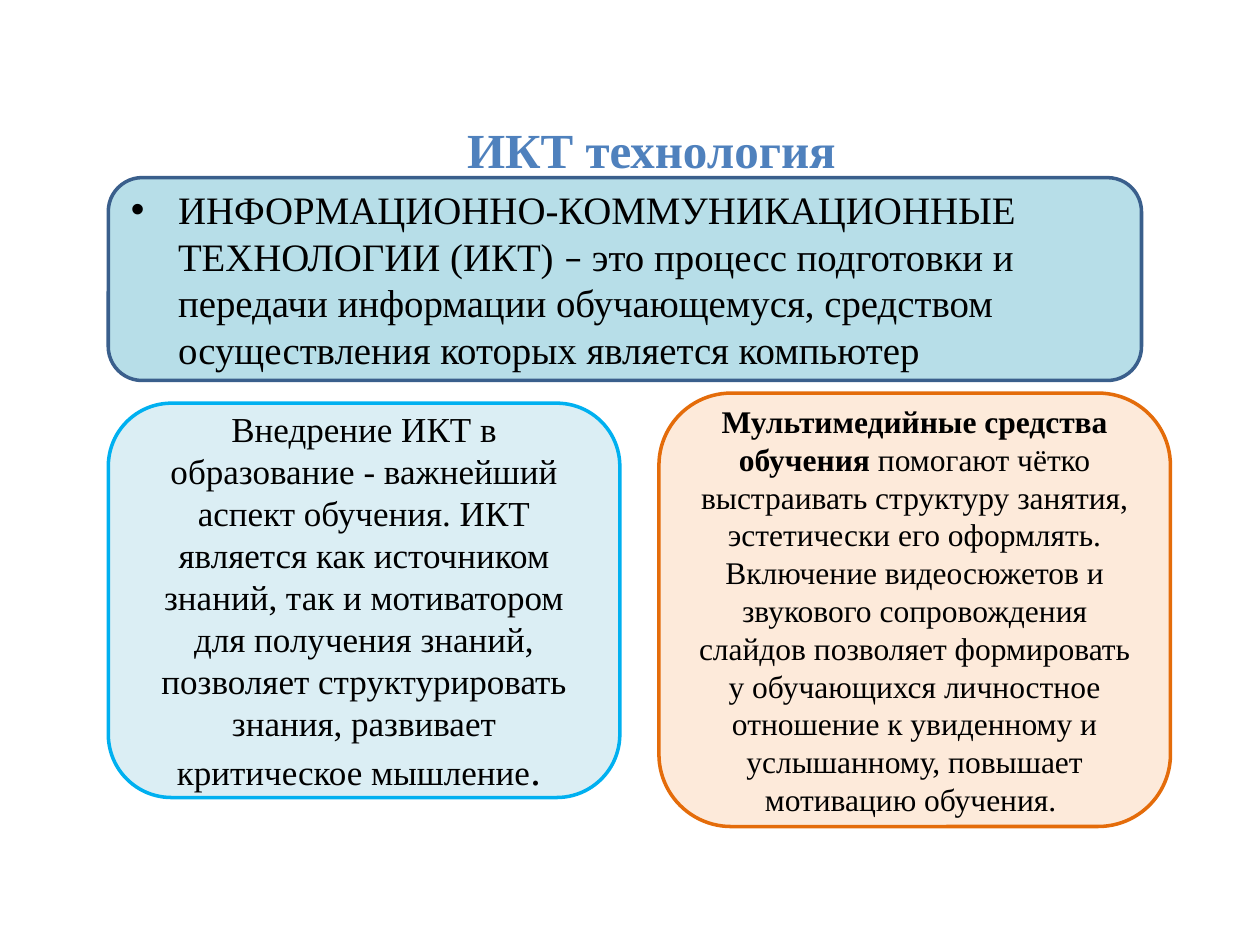
from lxml import etree
from pptx import Presentation
from pptx import util as u
from pptx.dml.color import RGBColor
from pptx.enum import shapes, text
from pptx.oxml.ns import qn

SERIF = "Times New Roman"
SANS = "Calibri"
BLACK = RGBColor(0x00, 0x00, 0x00)
TITLE_BLUE = RGBColor(0x4F, 0x81, 0xBD)
TEAL_FILL = RGBColor(0xB7, 0xDE, 0xE8)
NAVY_LINE = RGBColor(0x3A, 0x5F, 0x8C)
PALE_FILL = RGBColor(0xDB, 0xEE, 0xF4)
CYAN_LINE = RGBColor(0x00, 0xB0, 0xF0)
PEACH_FILL = RGBColor(0xFD, 0xEA, 0xDA)
ORANGE_LINE = RGBColor(0xE4, 0x6C, 0x0A)


def place(shape, left, top, width, height):
    shape.left, shape.top = u.Inches(left), u.Inches(top)
    shape.width, shape.height = u.Inches(width), u.Inches(height)


def paint(shape, fill, line):
    shape.fill.solid()
    shape.fill.fore_color.rgb = fill
    shape.line.color.rgb = line
    shape.line.width = u.Pt(2)


def write(shape, spans, align=None, color=BLACK, anchor=text.MSO_ANCHOR.MIDDLE):
    """Fill one paragraph with (words, size, font, bold) spans."""
    frame = shape.text_frame
    frame.word_wrap = True
    frame.auto_size = text.MSO_AUTO_SIZE.NONE
    frame.vertical_anchor = anchor
    para = frame.paragraphs[0]
    para.alignment = align
    para.space_before = u.Pt(0)
    for words, size, font, bold in spans:
        span = para.add_run()
        span.text = words
        span.font.size = u.Pt(size)
        span.font.name = font
        span.font.bold = bold
        span.font.color.rgb = color


def add_title(slide, words):
    title = slide.shapes.title
    place(title, 0.62, 0.86, 9, 1.31)
    write(title, [(words, 28, SERIF, True)], text.PP_ALIGN.CENTER,
          TITLE_BLUE, text.MSO_ANCHOR.TOP)
    title.text_frame.margin_left = u.Inches(0.2)
    title.text_frame.margin_top = u.Inches(0.09)


def add_definition(slide, spans):
    """Turn the body placeholder into a rounded, bulleted panel."""
    body = slide.placeholders[1]
    place(body, 0.86, 1.41, 8.2, 1.61)
    geometry = etree.SubElement(body.element.spPr, qn("a:prstGeom"), prst="roundRect")
    etree.SubElement(geometry, qn("a:avLst"))
    paint(body, TEAL_FILL, NAVY_LINE)
    write(body, spans)


def add_card(slide, position, fill, line, spans):
    card = slide.shapes.add_shape(
        shapes.MSO_SHAPE.ROUNDED_RECTANGLE, *map(u.Inches, position))
    card.shadow.inherit = False
    paint(card, fill, line)
    write(card, spans, text.PP_ALIGN.CENTER)
    return card


def main():
    deck = Presentation()
    deck.slide_width, deck.slide_height = u.Inches(10), u.Inches(7.5)
    slide = deck.slides.add_slide(deck.slide_layouts[1])
    add_title(slide, "ИКТ технология")
    add_definition(slide, [
        ("ИНФОРМАЦИОННО-КОММУНИКАЦИОННЫЕ ТЕХНОЛОГИИ (ИКТ) ", 22.2, SERIF, False),
        ("– ", 22.2, SANS, False),
        ("это процесс подготовки и передачи информации обучающемуся, "
         "средством осуществления которых является компьютер", 22.2, SERIF, False),
    ])
    role_card = add_card(slide, (0.86, 3.2, 4.06, 3.13), PALE_FILL, CYAN_LINE, [
        ("Внедрение ИКТ в образование - важнейший аспект обучения. "
         "ИКТ является как источником знаний, так и мотиватором для "
         "получения знаний, позволяет структурировать знания, развивает "
         "критическое мышление", 20, SERIF, False),
        (". ", 24, SERIF, False),
    ])
    role_card.adjustments[0] = 0.16
    add_card(slide, (5.23, 3.12, 4.06, 3.44), PEACH_FILL, ORANGE_LINE, [
        ("Мультимедийные средства обучения ", 18, SERIF, True),
        ("помогают чётко выстраивать структуру занятия, эстетически его "
         "оформлять. Включение видеосюжетов и звукового сопровождения "
         "слайдов позволяет формировать у обучающихся личностное отношение "
         "к увиденному и услышанному, повышает мотивацию обучения. ",
         18, SERIF, False),
    ])
    deck.save("out.pptx")


if __name__ == "__main__":
    main()
